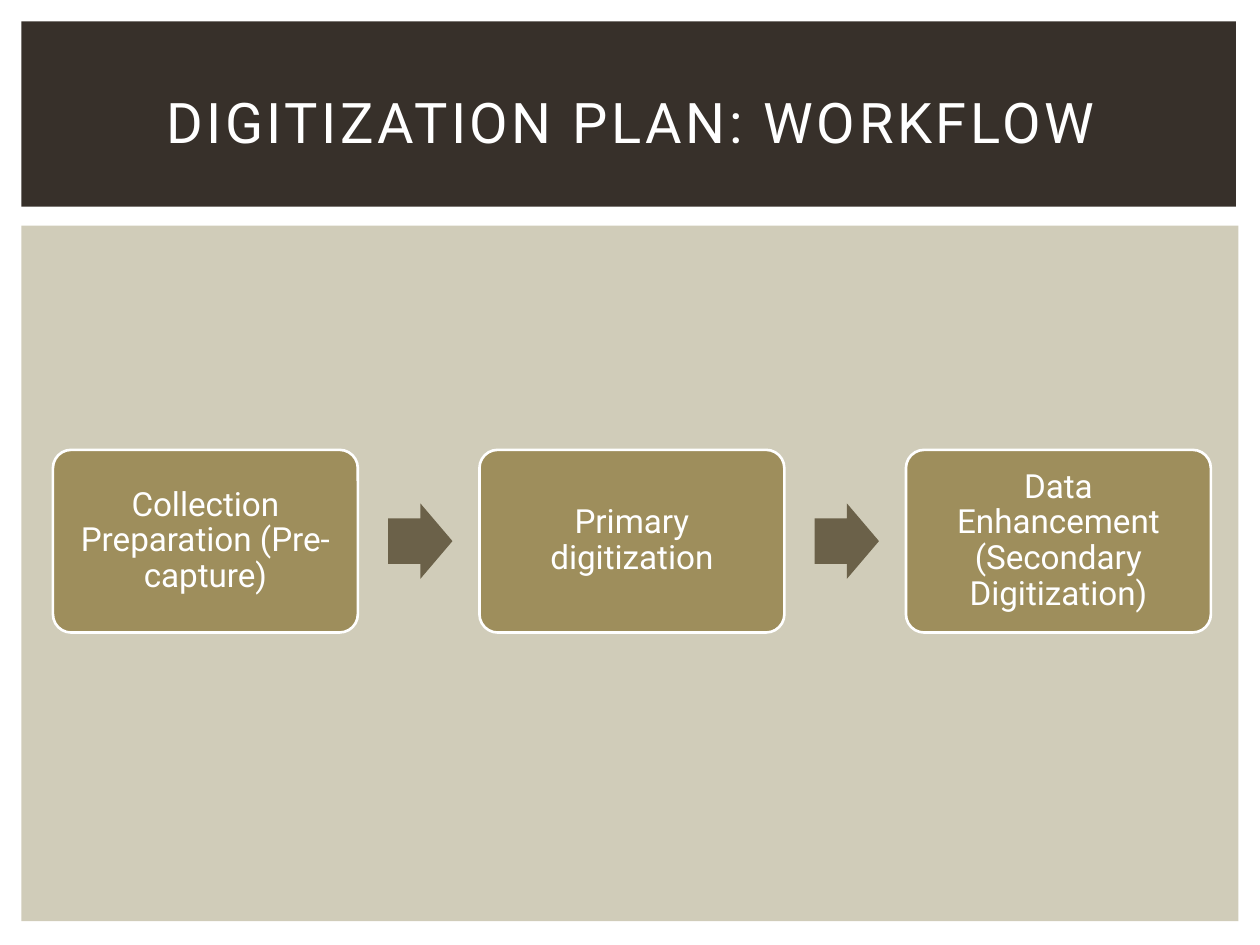
from pptx import Presentation
from pptx.dml.color import RGBColor
from pptx.enum.shapes import MSO_SHAPE as SHAPE
from pptx.enum.text import MSO_ANCHOR as ANCHOR, PP_ALIGN as ALIGN
from pptx.util import Inches, Pt

COLORS = {"white": "FFFFFF", "panel": "D0CCB9", "band": "37302A",
          "card": "9E8E5C", "arrow": "6B6149"}
FONT = "Roboto"
STEPS = ["Collection Preparation (Pre-capture)", "Primary digitization",
         "Data Enhancement (Secondary Digitization)"]


def rgb(name):
    return RGBColor.from_string(COLORS[name])


def add_block(s, kind, box, fill, adjustments=()):
    sp = s.shapes.add_shape(kind, *[Inches(v) for v in box])
    sp.shadow.inherit = False
    sp.fill.solid()
    sp.fill.fore_color.rgb = rgb(fill)
    sp.line.fill.background()
    for i, value in enumerate(adjustments):
        sp.adjustments[i] = value
    return sp


def set_text(sp, text, size):
    tf = sp.text_frame
    tf.word_wrap = True
    tf.vertical_anchor = ANCHOR.MIDDLE
    p = tf.paragraphs[0]
    p.text = text
    p.alignment = ALIGN.CENTER
    p.font.name = FONT
    p.font.size = Pt(size)
    p.font.color.rgb = rgb("white")
    return p


def add_title(s, box, text):
    x, y, w, h = box
    add_block(s, SHAPE.RECTANGLE, box, "band")
    title = s.shapes.title
    title.left, title.top = Inches(x + 0.25), Inches(y + 0.15 * h)
    title.width, title.height = Inches(w - 0.47), Inches(0.78 * h)
    p = set_text(title, text, 32)
    p.runs[0].font._element.set("spc", "200")
    s.shapes._spTree.append(title._element)


def add_card(s, box, text):
    sp = add_block(s, SHAPE.ROUNDED_RECTANGLE, box, "card", [0.1])
    sp.line.color.rgb = rgb("white")
    sp.line.width = Pt(1.5)
    tf = sp.text_frame
    tf.margin_left = tf.margin_right = Inches(0.08)
    tf.margin_top = tf.margin_bottom = Inches(0.08)
    p = set_text(sp, text, 19)
    p.line_spacing = 0.9


def add_workflow(s, box, steps):
    x, y, w, h = box
    card_w = 2.42
    pitch = (w - card_w) / (len(steps) - 1)
    gap = pitch - card_w
    arrow_w, arrow_h = 0.51, 0.6
    for i, text in enumerate(steps):
        left = x + i * pitch
        add_card(s, (left, y, card_w, h), text)
        if i < len(steps) - 1:
            arrow = (left + card_w + gap / 4, y + (h - arrow_h) / 2, arrow_w, arrow_h)
            add_block(s, SHAPE.RIGHT_ARROW, arrow, "arrow", [0.6, 0.5])


def main():
    prs = Presentation()
    prs.slide_width, prs.slide_height = Inches(10), Inches(7.5)
    s = prs.slides.add_slide(prs.slide_layouts[5])
    add_block(s, SHAPE.RECTANGLE, (0.17, 1.79, 9.66, 5.52), "panel")
    add_title(s, (0.17, 0.17, 9.64, 1.47), "DIGITIZATION PLAN: WORKFLOW")
    add_workflow(s, (0.42, 3.57, 9.19, 1.45), STEPS)
    prs.save("out.pptx")


if __name__ == "__main__":
    main()
